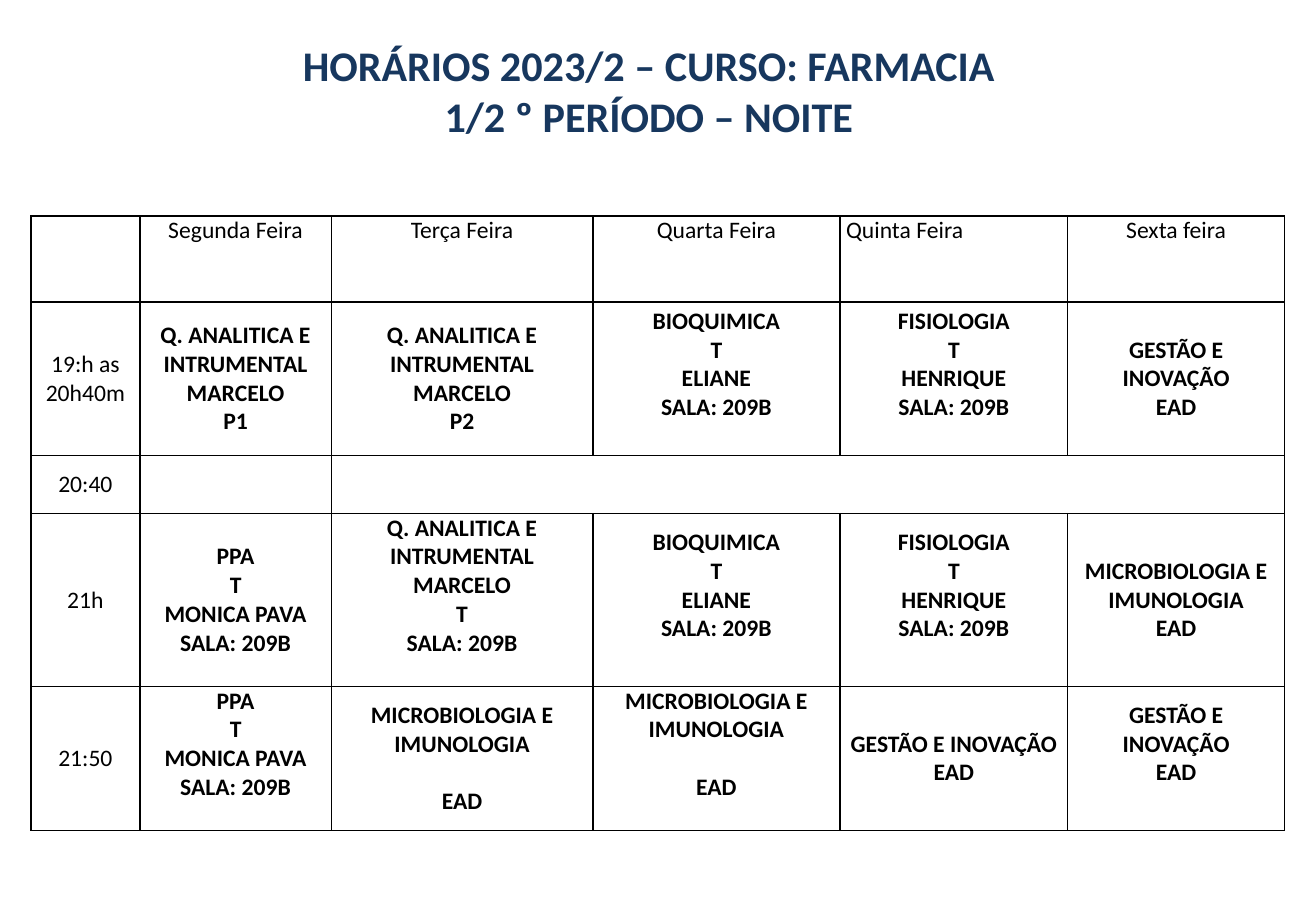
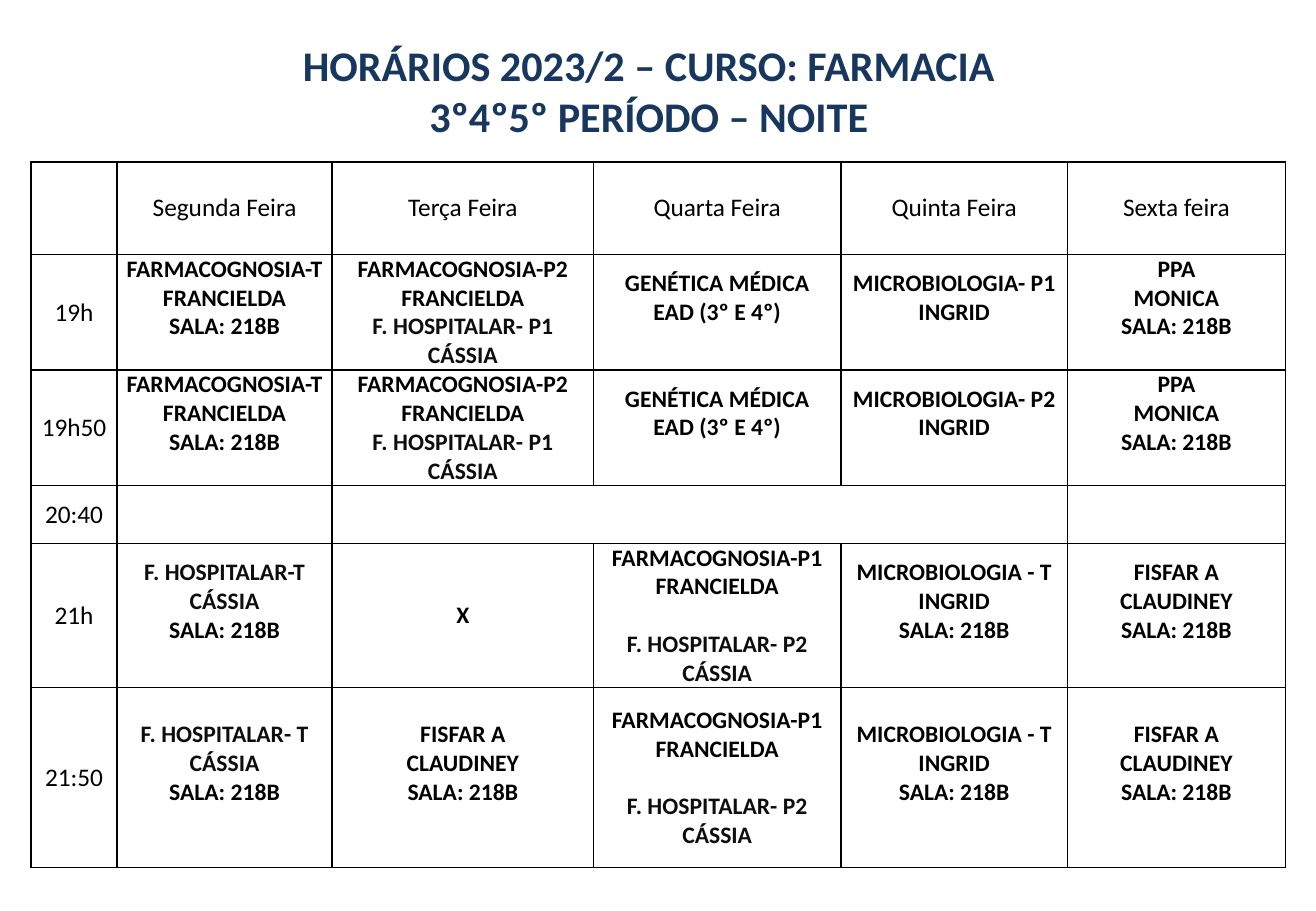
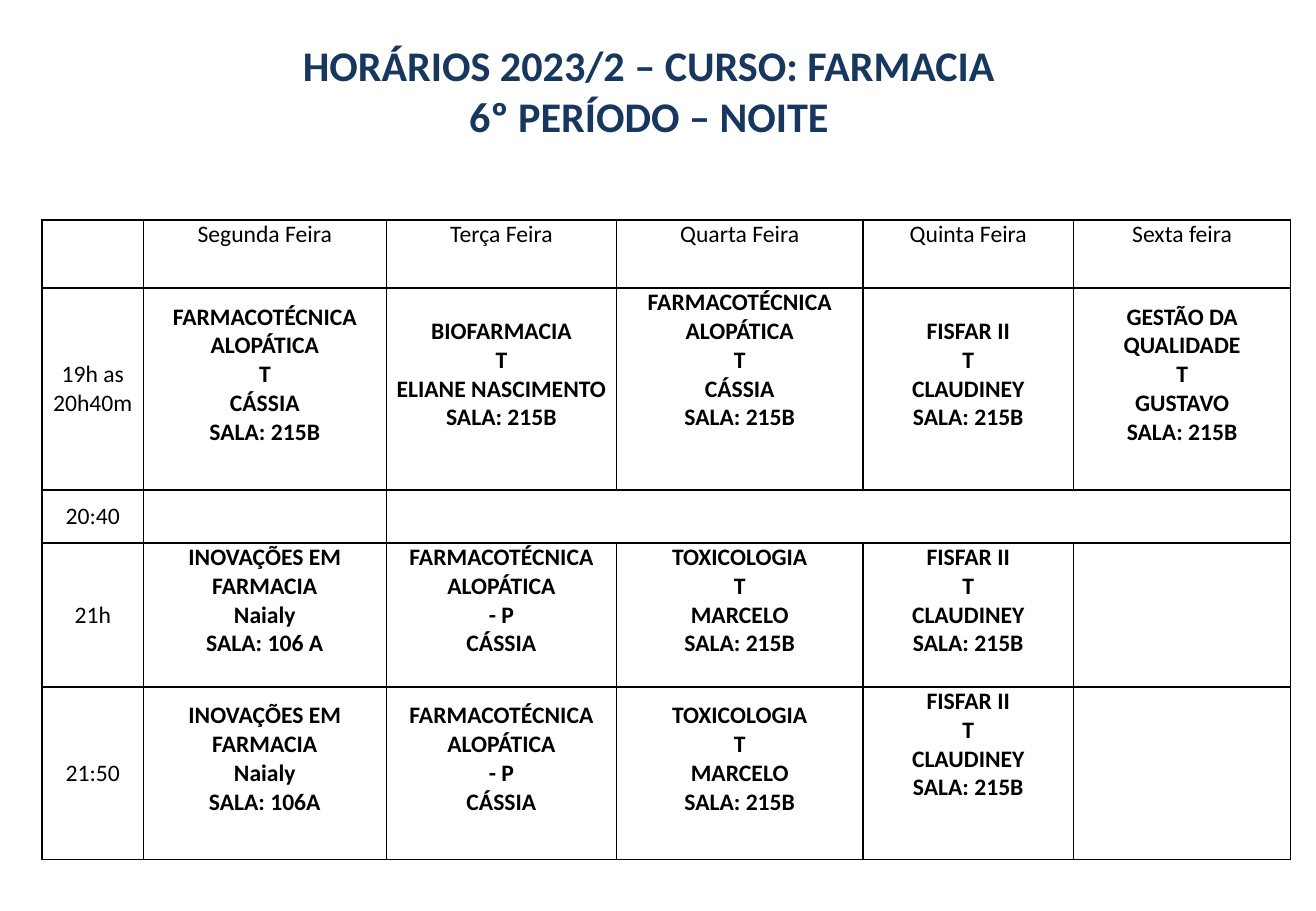
import dataclasses
import typing

import lxml.etree
import pptx
import pptx.dml.color
import pptx.enum.text
import pptx.oxml.ns
import pptx.presentation
import pptx.table
import pptx.util

Pt = pptx.util.Pt
ALIGN = pptx.enum.text.PP_ALIGN
ANCHOR = pptx.enum.text.MSO_ANCHOR

FONT = "Calibri"
NAVY = "17375E"
BLACK = "000000"
SOFT_BLACK = "0D0D0D"
LESSON_SIZE = 14
LINE_PITCH = 17.09
COURSE = "HORÁRIOS 2023/2 – CURSO: FARMACIA"
WEEKDAYS = ("Segunda Feira", "Terça Feira", "Quarta Feira", "Quinta Feira", "Sexta feira")
BREAK_MERGE_START = 2

TITLE_BOX = {"left": Pt(21.6), "top": Pt(18), "width": Pt(725.8), "height": Pt(67.7)}
TITLE_FRAME = {
    "word_wrap": True,
    "auto_size": pptx.enum.text.MSO_AUTO_SIZE.NONE,
    "vertical_anchor": ANCHOR.MIDDLE,
    "margin_top": Pt(7),
    "margin_bottom": Pt(3.6),
}
CELL_FORMAT = {"margin_left": Pt(3.6), "margin_right": Pt(3.6), "margin_top": Pt(0)}
PLAIN_TABLE = {"first_row": False, "horz_banding": False}


@dataclasses.dataclass(frozen=True)
class Lesson:
    text: str = ""
    lift: int = 0


@dataclasses.dataclass(frozen=True)
class Period:
    height: float
    hour: str
    lessons: tuple[Lesson, ...] = ()
    merge_end: int = 0


@dataclasses.dataclass(frozen=True)
class Timetable:
    term: str
    left: float
    top: float
    columns: tuple[float, ...]
    header_height: float
    periods: tuple[Period, ...]
    label_size: int = 14
    header_anchor: ANCHOR = ANCHOR.TOP
    left_aligned_days: tuple[str, ...] = ()
    soft_starts: tuple[str, ...] = ()


ANALYTICAL = "Q. ANALITICA E INTRUMENTAL\nMARCELO\n"
BIOCHEMISTRY = Lesson("BIOQUIMICA\nT\nELIANE\nSALA: 209B", 1)
PHYSIOLOGY = Lesson("FISIOLOGIA\nT\nHENRIQUE\nSALA: 209B", 1)
PPA = "PPA\nT\nMONICA PAVA\nSALA: 209B"
MANAGEMENT = "GESTÃO E INOVAÇÃO\nEAD"
MICROBIOLOGY = "MICROBIOLOGIA E IMUNOLOGIA\n"

PHARMACOGNOSY = Lesson("FARMACOGNOSIA-T\nFRANCIELDA\nSALA: 218B", 1)
PRACTICALS = Lesson("FARMACOGNOSIA-P2\nFRANCIELDA\nF. HOSPITALAR- P1\nCÁSSIA")
SWAPPED_PRACTICALS = Lesson("FARMACOGNOSIA-P1\nFRANCIELDA\n\nF. HOSPITALAR- P2\nCÁSSIA")
GENETICS = Lesson("GENÉTICA MÉDICA\nEAD (3º E 4º)", 1)
PPA_MONICA = Lesson("PPA\nMONICA\nSALA: 218B", 1)
MICROBIOLOGY_THEORY = Lesson("MICROBIOLOGIA - T\nINGRID\nSALA: 218B", 1)
FISFAR_A = Lesson("FISFAR A\nCLAUDINEY\nSALA: 218B", 1)

ALLOPATHIC = "FARMACOTÉCNICA ALOPÁTICA\n"
ALLOPATHIC_THEORY = ALLOPATHIC + "T\nCÁSSIA\nSALA: 215B"
ALLOPATHIC_PRACTICE = Lesson(ALLOPATHIC + "- P\nCÁSSIA", 1)
INNOVATIONS = "INOVAÇÕES EM FARMACIA\nNaialy\n"
TOXICOLOGY = Lesson("TOXICOLOGIA\nT\nMARCELO\nSALA: 215B", 1)
FISFAR_II = "FISFAR II\nT\nCLAUDINEY\nSALA: 215B"

TIMETABLES = (
    Timetable(
        "1/2 º PERÍODO – NOITE", 18.4, 128, (64.5, 113.5, 155, 146.5, 135, 128.5), 51,
        (
            Period(91, "19:h as 20h40m", (
                Lesson(ANALYTICAL + "P1"), Lesson(ANALYTICAL + "P2"),
                BIOCHEMISTRY, PHYSIOLOGY, Lesson(MANAGEMENT),
            )),
            Period(34.4, "20:40", merge_end=5),
            Period(102.5, "21h", (
                Lesson(PPA), Lesson(ANALYTICAL + "T\nSALA: 209B", 1),
                BIOCHEMISTRY, PHYSIOLOGY, Lesson(MICROBIOLOGY + "EAD"),
            )),
            Period(85.5, "21:50", (
                Lesson(PPA, 1), Lesson(MICROBIOLOGY + "\nEAD"),
                Lesson(MICROBIOLOGY + "\nEAD", 1),
                Lesson(MANAGEMENT), Lesson(MANAGEMENT, 1),
            )),
        ),
        left_aligned_days=("Quinta Feira",),
    ),
    Timetable(
        "3º4º5º PERÍODO – NOITE", 18.4, 96, (51, 127.5, 155, 146.5, 134.5, 129), 55,
        (
            *(
                Period(68.4, hour, (
                    PHARMACOGNOSY, PRACTICALS, GENETICS,
                    Lesson(f"MICROBIOLOGIA- {group}\nINGRID", 1), PPA_MONICA,
                ))
                for hour, group in (("19h", "P1"), ("19h50", "P2"))
            ),
            Period(34.4, "20:40", merge_end=4),
            Period(85.5, "21h", (
                Lesson("F. HOSPITALAR-T\nCÁSSIA\nSALA: 218B", 1), Lesson("X"),
                SWAPPED_PRACTICALS, MICROBIOLOGY_THEORY, FISFAR_A,
            )),
            Period(106.7, "21:50", (
                Lesson("F. HOSPITALAR- T\nCÁSSIA\nSALA: 218B", 1), FISFAR_A,
                SWAPPED_PRACTICALS, MICROBIOLOGY_THEORY, FISFAR_A,
            )),
        ),
        label_size=15,
        header_anchor=ANCHOR.MIDDLE,
        soft_starts=("F. HOSPITALAR", "CÁSSIA"),
    ),
    Timetable(
        "6º PERÍODO – NOITE", 25, 130.5, (60, 144, 136.5, 146, 125, 128.5), 40.3,
        (
            Period(119.6, "19h as 20h40m", (
                Lesson(ALLOPATHIC_THEORY, 1),
                Lesson("BIOFARMACIA\nT\nELIANE NASCIMENTO\nSALA: 215B", 1),
                Lesson(ALLOPATHIC_THEORY, 2), Lesson(FISFAR_II, 1),
                Lesson("GESTÃO DA QUALIDADE\nT\nGUSTAVO\nSALA: 215B", 1),
            )),
            Period(31.4, "20:40", merge_end=5),
            Period(85.5, "21h", (
                Lesson(INNOVATIONS + "SALA: 106 A", 1), ALLOPATHIC_PRACTICE,
                TOXICOLOGY, Lesson(FISFAR_II, 1),
            )),
            Period(102, "21:50", (
                Lesson(INNOVATIONS + "SALA: 106A", 1), ALLOPATHIC_PRACTICE,
                TOXICOLOGY, Lesson(FISFAR_II, 2),
            )),
        ),
    ),
)


def apply(target: typing.Any, values: dict[str, typing.Any]) -> None:
    for attribute, value in values.items():
        setattr(target, attribute, value)


def color(code: str) -> pptx.dml.color.RGBColor:
    return pptx.dml.color.RGBColor.from_string(code)


def write_lines(
    frame: pptx.text.text.TextFrame,
    text: str,
    size: float,
    bold: bool,
    code: str = BLACK,
    align: ALIGN = ALIGN.CENTER,
    soft_starts: tuple[str, ...] = (),
) -> None:
    gap = 0.0
    paragraph = None
    for line in text.split("\n"):
        if not line:
            gap += LINE_PITCH
            continue
        paragraph = frame.add_paragraph() if paragraph else frame.paragraphs[0]
        apply(paragraph, {"alignment": align, "space_before": Pt(gap)})
        run = paragraph.add_run()
        run.text = line
        apply(run.font, {"name": FONT, "size": Pt(size), "bold": bold})
        soft = bool(soft_starts) and line.startswith(soft_starts)
        run.font.color.rgb = color(SOFT_BLACK if soft else code)
        gap = 0.0


def style_cell(cell: pptx.table._Cell, anchor: ANCHOR, lift: int = 0) -> None:
    apply(cell, CELL_FORMAT | {"vertical_anchor": anchor, "margin_bottom": Pt(lift * LINE_PITCH)})
    properties = cell._tc.get_or_add_tcPr()
    for side in ("a:lnL", "a:lnR", "a:lnT", "a:lnB"):
        border = lxml.etree.SubElement(properties, pptx.oxml.ns.qn(side), w=str(Pt(1)))
        fill = lxml.etree.SubElement(border, pptx.oxml.ns.qn("a:solidFill"))
        lxml.etree.SubElement(fill, pptx.oxml.ns.qn("a:srgbClr"), val=BLACK)
    cell.fill.background()


def draw_title(slide: pptx.slide.Slide, term: str) -> None:
    title = slide.shapes.title
    apply(title, TITLE_BOX)
    apply(title.text_frame, TITLE_FRAME)
    write_lines(title.text_frame, f"{COURSE}\n{term}", 25, True, NAVY)


def draw_grid(slide: pptx.slide.Slide, timetable: Timetable) -> None:
    heights = (timetable.header_height, *(period.height for period in timetable.periods))
    grid = slide.shapes.add_table(
        len(heights), len(timetable.columns), Pt(timetable.left), Pt(timetable.top),
        Pt(sum(timetable.columns)), Pt(sum(heights)),
    ).table
    apply(grid, PLAIN_TABLE)
    for column, width in zip(grid.columns, timetable.columns):
        column.width = Pt(width)
    for row, height in zip(grid.rows, heights):
        row.height = Pt(height)

    style_cell(grid.cell(0, 0), timetable.header_anchor)
    for day_index, day in enumerate(WEEKDAYS, 1):
        day_cell = grid.cell(0, day_index)
        style_cell(day_cell, timetable.header_anchor)
        align = ALIGN.LEFT if day in timetable.left_aligned_days else ALIGN.CENTER
        write_lines(day_cell.text_frame, day, timetable.label_size, False, align=align)

    for period_index, period in enumerate(timetable.periods, 1):
        hour_cell = grid.cell(period_index, 0)
        style_cell(hour_cell, ANCHOR.MIDDLE)
        write_lines(hour_cell.text_frame, period.hour, timetable.label_size, False)
        free = (Lesson(),) * (len(WEEKDAYS) - len(period.lessons))
        for day_index, lesson in enumerate(period.lessons + free, 1):
            lesson_cell = grid.cell(period_index, day_index)
            style_cell(lesson_cell, ANCHOR.MIDDLE, lesson.lift)
            write_lines(
                lesson_cell.text_frame, lesson.text, LESSON_SIZE, True,
                soft_starts=timetable.soft_starts,
            )
        if period.merge_end:
            break_start = grid.cell(period_index, BREAK_MERGE_START)
            break_start.merge(grid.cell(period_index, period.merge_end))


def main() -> None:
    deck = pptx.Presentation()
    apply(deck, {"slide_width": Pt(780), "slide_height": Pt(540)})
    title_only = deck.slide_layouts.get_by_name("Title Only")
    for timetable in TIMETABLES:
        slide = deck.slides.add_slide(title_only)
        draw_title(slide, timetable.term)
        draw_grid(slide, timetable)
    deck.save("out.pptx")


if __name__ == "__main__":
    main()
